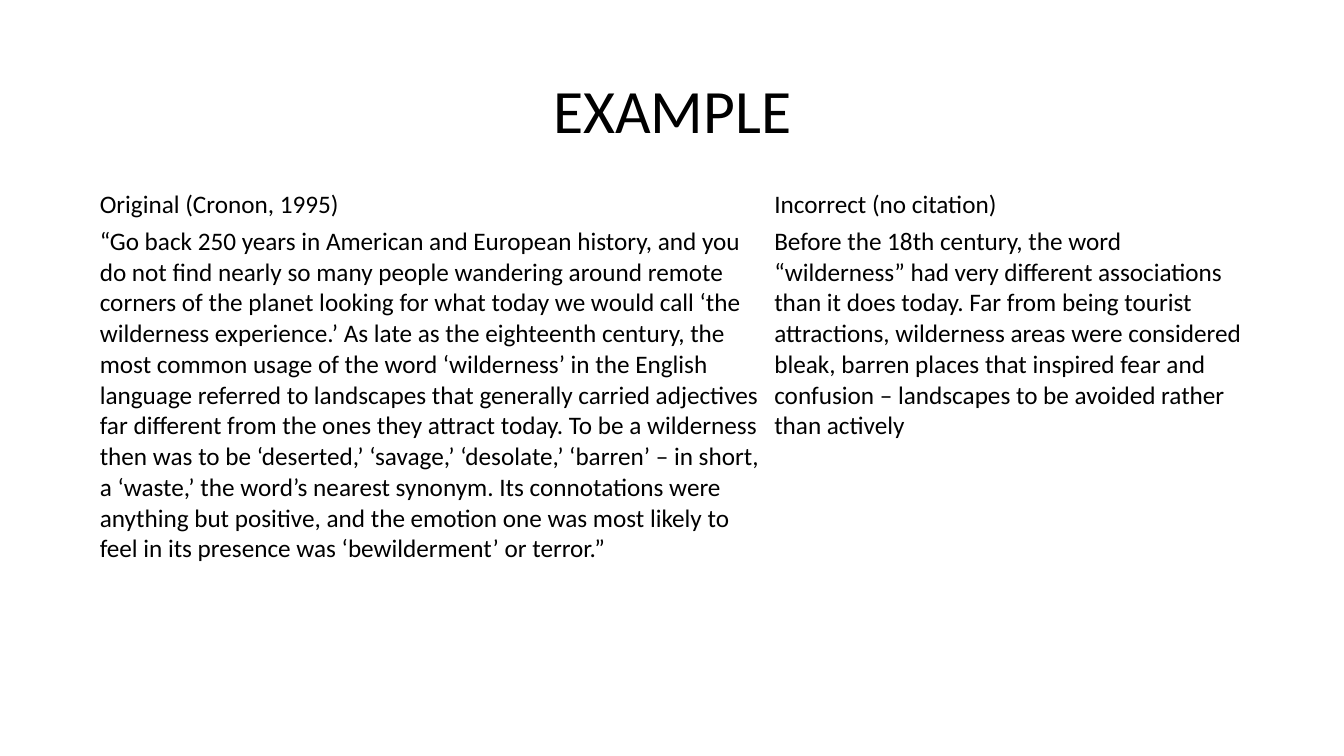
import dataclasses

import pptx
import pptx.dml.color
import pptx.enum.text
import pptx.util

Inches = pptx.util.Inches
COLORS = {"ink": "000000", "page": "FFFFFF"}
FONT = "Calibri"


@dataclasses.dataclass
class Column:
    width: float
    head: str
    body: str


COLUMNS = [
    Column(
        6.69,
        "Original (Cronon, 1995)",
        "“Go back 250 years in American and European history, and you do not find "
        "nearly so many people wandering around remote corners of the planet looking "
        "for what today we would call ‘the wilderness experience.’ As late as the "
        "eighteenth century, the most common usage of the word ‘wilderness’ in the "
        "English language referred to landscapes that generally carried adjectives "
        "far different from the ones they attract today. To be a wilderness then was "
        "to be ‘deserted,’ ‘savage,’ ‘desolate,’ ‘barren’ – in short, a ‘waste,’ the "
        "word’s nearest synonym. Its connotations were anything but positive, and the "
        "emotion one was most likely to feel in its presence was ‘bewilderment’ or "
        "terror.”",
    ),
    Column(
        4.81,
        "Incorrect (no citation)",
        "Before the 18th century, the word “wilderness” had very different "
        "associations than it does today. Far from being tourist attractions, "
        "wilderness areas were considered bleak, barren places that inspired fear and "
        "confusion – landscapes to be avoided rather than actively",
    ),
]
HEIGHTS = [0.28, 4.63]


def style(par, size: float) -> None:
    par.font.name = FONT
    par.font.size = pptx.util.Pt(size)
    par.font.bold = False
    par.font.color.rgb = pptx.dml.color.RGBColor.from_string(COLORS["ink"])


def add_title(slide, text: str) -> None:
    title = slide.shapes.title
    title.left, title.top = Inches(0.92), Inches(0.4)
    title.width, title.height = Inches(11.5), Inches(1.45)
    frame = title.text_frame
    frame.text = text
    frame.vertical_anchor = pptx.enum.text.MSO_ANCHOR.MIDDLE
    par = frame.paragraphs[0]
    par.alignment = pptx.enum.text.PP_ALIGN.CENTER
    par.line_spacing = 0.9
    style(par, 44)


def fill_cell(cell, text: str) -> None:
    cell.fill.solid()
    cell.fill.fore_color.rgb = pptx.dml.color.RGBColor.from_string(COLORS["page"])
    cell.margin_left = cell.margin_right = Inches(0.07)
    cell.margin_top = cell.margin_bottom = Inches(0.03)
    cell.text = text
    style(cell.text_frame.paragraphs[0], 18)


def add_grid(slide, columns: list[Column]) -> None:
    frame = slide.shapes.add_table(
        len(HEIGHTS), len(columns),
        Inches(0.92), Inches(1.85), Inches(11.5), Inches(sum(HEIGHTS)),
    )
    table = frame.table
    table.first_row = table.horz_banding = False
    for row, height in zip(table.rows, HEIGHTS):
        row.height = Inches(height)
    for col, column in enumerate(columns):
        table.columns[col].width = Inches(column.width)
        for row, text in enumerate((column.head, column.body)):
            fill_cell(table.cell(row, col), text)


def main() -> None:
    deck = pptx.Presentation()
    deck.slide_width, deck.slide_height = Inches(13.33), Inches(7.5)
    slide = deck.slides.add_slide(deck.slide_layouts[5])
    add_title(slide, "EXAMPLE")
    add_grid(slide, COLUMNS)
    deck.save("out.pptx")


if __name__ == "__main__":
    main()
